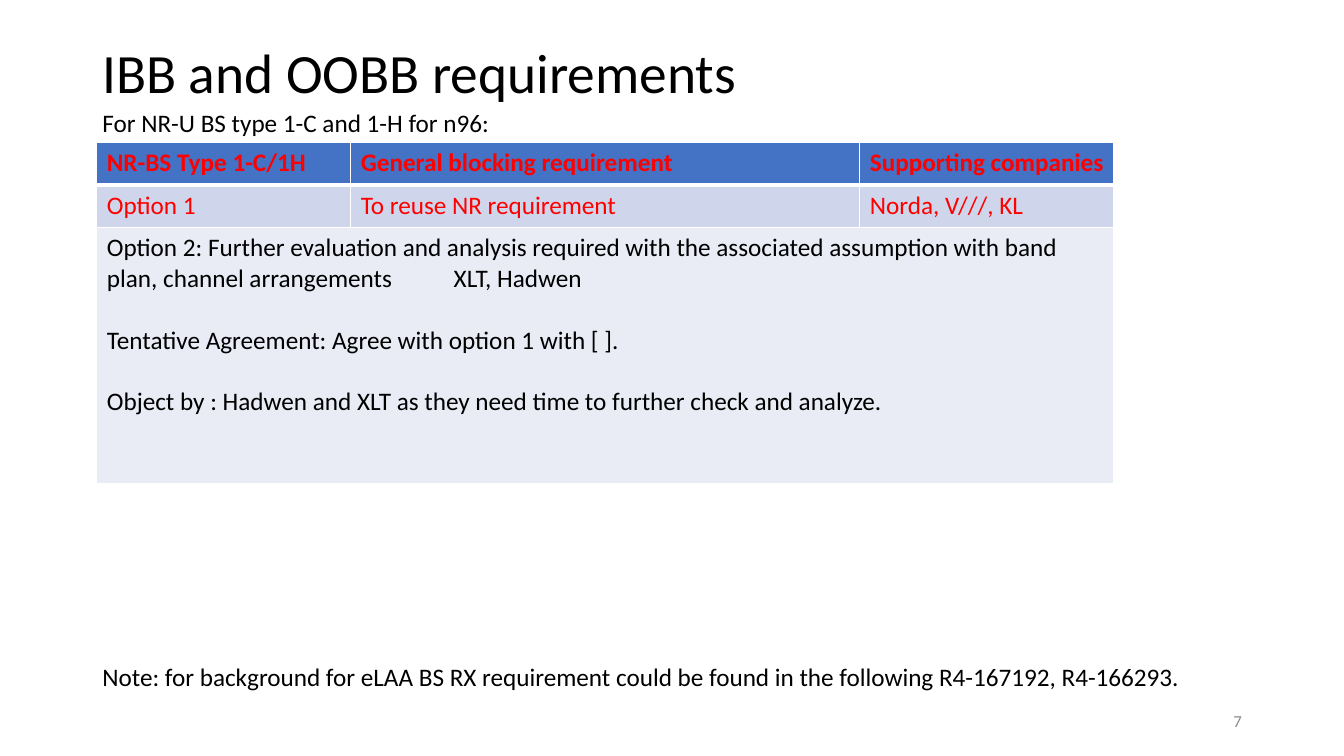
from dataclasses import dataclass

from lxml import etree
from pptx import Presentation
from pptx.dml.color import RGBColor
from pptx.enum.text import MSO_ANCHOR, PP_ALIGN
from pptx.oxml.ns import qn
from pptx.util import Cm, Pt

TOP, MIDDLE = MSO_ANCHOR.TOP, MSO_ANCHOR.MIDDLE
LEFT, RIGHT = PP_ALIGN.LEFT, PP_ALIGN.RIGHT

BLACK = RGBColor(0x00, 0x00, 0x00)
GREY = RGBColor(0x8C, 0x8C, 0x8C)
RED = RGBColor(0xFF, 0x00, 0x00)
WHITE = RGBColor(0xFF, 0xFF, 0xFF)
BLUE = RGBColor(0x44, 0x72, 0xC4)
BAND = RGBColor(0xCF, 0xD5, 0xEA)
PALE = RGBColor(0xE9, 0xEB, 0xF5)

FONT = "Calibri"
GAP = Pt(22)
TAB = Cm(8.74)
THIN, THICK = Pt(1), Pt(3)


@dataclass
class Label:
    text: str
    left: float
    top: float
    width: float
    height: float
    size: float = 18
    color: RGBColor = BLACK
    space: float = 1.0
    anchor: MSO_ANCHOR = TOP
    align: PP_ALIGN = LEFT


@dataclass
class Row:
    cells: list[str]
    height: float
    fill: RGBColor
    color: RGBColor
    bold: bool = False
    above: int = THIN
    below: int = THIN


LABELS = [
    Label("IBB and OOBB requirements", 2.33, 1, 29.2, 1.8, 39.6, space=0.9, anchor=MIDDLE),
    Label("For NR-U BS type 1-C and 1-H for n96:", 2.33, 2.79, 29.2, 0.8, space=0.7),
    Label("Note: for background for eLAA BS RX requirement could be found "
          "in the following R4-167192, R4-166293.", 2.33, 16.74, 29.2, 0.8, space=0.7),
    Label("7", 23.93, 17.65, 7.62, 1.02, 12, GREY, anchor=MIDDLE, align=RIGHT),
]

WIDTHS = [6.4, 12.83, 6.4]
ROWS = [
    Row(["NR-BS Type 1-C/1H", "General blocking requirement", "Supporting companies"],
        1.07, BLUE, RED, bold=True, below=THICK),
    Row(["Option 1", "To reuse NR requirement", "Norda, V///, KL"],
        1.07, BAND, RED, above=THICK),
    Row(["Option 2: Further evaluation and analysis required with the associated "
         "assumption with band plan, channel arrangements\tXLT, Hadwen\n"
         "Tentative Agreement: Agree with option 1 with [ ].\n"
         "Object by : Hadwen and XLT as they need time to further check and analyze."],
        6.45, PALE, BLACK),
]


def style(font, size: float, color: RGBColor, bold: bool = False) -> None:
    for name, value in {"name": FONT, "size": Pt(size), "bold": bold}.items():
        setattr(font, name, value)
    font.color.rgb = color


def add_label(slide, item: Label) -> None:
    box = slide.shapes.add_textbox(
        Cm(item.left), Cm(item.top), Cm(item.width), Cm(item.height))
    frame = box.text_frame
    frame.word_wrap = True
    frame.vertical_anchor = item.anchor
    para = frame.paragraphs[0]
    for name, value in {"alignment": item.align, "line_spacing": item.space}.items():
        setattr(para, name, value)
    run = para.add_run()
    run.text = item.text
    style(run.font, item.size, item.color)


def add_edge(cell, side: str, width: int) -> None:
    line = etree.SubElement(cell._tc.get_or_add_tcPr(), qn("a:" + side), w=str(width))
    fill = etree.SubElement(line, qn("a:solidFill"))
    etree.SubElement(fill, qn("a:srgbClr"), val=str(WHITE))


def add_tab(para) -> None:
    stops = etree.SubElement(para._p.get_or_add_pPr(), qn("a:tabLst"))
    etree.SubElement(stops, qn("a:tab"), pos=str(TAB), algn="l")


def fill_cell(cell, text: str, row: Row) -> None:
    # Borders come before the fill in the cell properties
    edges = {"lnL": THIN, "lnR": THIN, "lnT": row.above, "lnB": row.below}
    for side, width in edges.items():
        add_edge(cell, side, width)
    cell.fill.solid()
    cell.fill.fore_color.rgb = row.fill

    frame = cell.text_frame
    for index, part in enumerate(text.split("\n")):
        para = frame.add_paragraph() if index else frame.paragraphs[0]
        if "\t" in part:
            add_tab(para)
        if index:
            para.space_before = GAP
        run = para.add_run()
        run.text = part
        style(run.font, 18, row.color, row.bold)


def add_grid(slide, left: float, top: float) -> None:
    frame = slide.shapes.add_table(
        len(ROWS), len(WIDTHS), Cm(left), Cm(top),
        Cm(sum(WIDTHS)), Cm(sum(row.height for row in ROWS)))
    table = frame.table
    table.horz_banding = False
    for column, width in zip(table.columns, WIDTHS):
        column.width = Cm(width)
    for index, row in enumerate(ROWS):
        table.rows[index].height = Cm(row.height)
        # A row with a single text spans the whole table
        if len(row.cells) == 1:
            table.cell(index, 0).merge(table.cell(index, len(WIDTHS) - 1))
        for col, text in enumerate(row.cells):
            fill_cell(table.cell(index, col), text, row)


def main() -> None:
    deck = Presentation()
    deck.slide_width, deck.slide_height = Cm(33.87), Cm(19.05)
    slide = deck.slides.add_slide(deck.slide_layouts[6])

    # Title, body lines and page number
    for item in LABELS:
        add_label(slide, item)

    # Options table
    add_grid(slide, 2.44, 3.6)

    deck.save("out.pptx")


if __name__ == "__main__":
    main()
